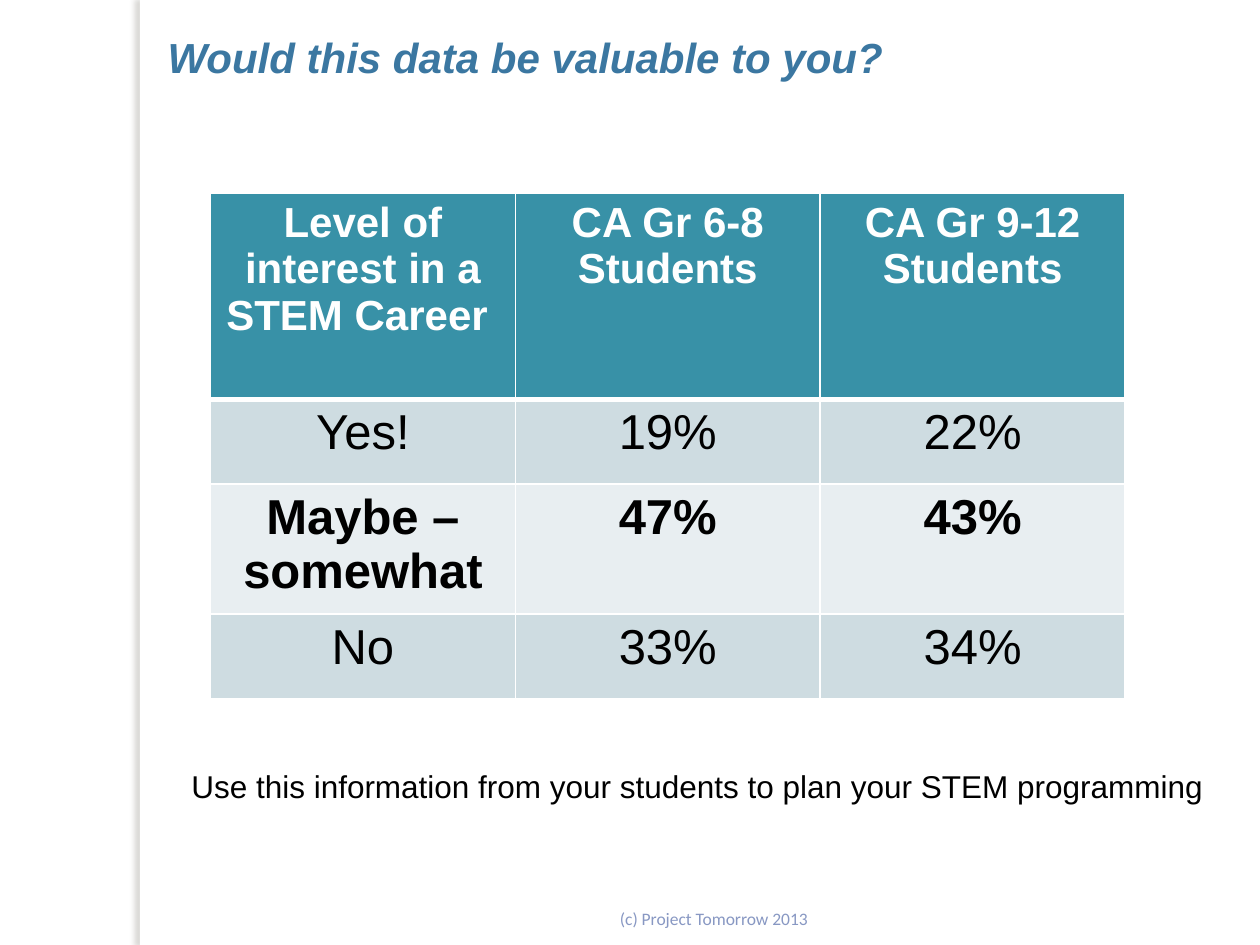
"""Build the STEM career interest slide."""
import pptx
import pptx.util
import pptx.dml.color
import pptx.enum.shapes
import pptx.enum.text
import pptx.oxml
import pptx.oxml.ns

Inches, Pt = pptx.util.Inches, pptx.util.Pt
ALIGN = pptx.enum.text.PP_ALIGN
ANCHOR = pptx.enum.text.MSO_ANCHOR
NS = pptx.oxml.ns.nsdecls("a")

COLORS = {
    "white": "FFFFFF", "title": "3B77A1", "header": "3891A7", "band": "CEDCE1",
    "light": "E8EEF1", "text": "000000", "footer": "8898C3", "shadow": "736F63",
}
TITLE = "Would this data be valuable to you?"
ADVICE = "Use this information from your students to plan your STEM programming"
COPYRIGHT = "(c) Project Tomorrow 2013"
HEADER = [["Level of interest in a STEM Career "], ["CA Gr 6-8 Students"], ["CA Gr 9-12", "Students"]]
ANSWERS = [
    ("Yes!", "19%", "22%"),
    ("Maybe – somewhat", "47%", "43%"),
    ("No", "33%", "34%"),
]
EMPHASIZED = "Maybe – somewhat"
TABLE_LEFT, TABLE_TOP, COLUMN_WIDTH = 1.67, 1.53, 2.42
HEADER_HEIGHT, ANSWER_HEIGHT = 1.64, 0.67


def rgb(name):
    return pptx.dml.color.RGBColor.from_string(COLORS[name])


def write(frame, lines, size, color, align=ALIGN.LEFT, font="Arial", bold=False, italic=False):
    for index, line in enumerate(lines):
        paragraph = frame.paragraphs[0] if index == 0 else frame.add_paragraph()
        paragraph.alignment = align
        run = paragraph.add_run()
        run.text = line
        run.font.name, run.font.size = font, Pt(size)
        run.font.bold, run.font.italic = bold, italic
        run.font.color.rgb = rgb(color)


def add_panel(slide, width):
    panel = slide.shapes.add_shape(
        pptx.enum.shapes.MSO_SHAPE.RECTANGLE, Inches(1.11), 0, Inches(width), Inches(7.5))
    panel.shadow.inherit = False
    panel.fill.solid()
    panel.fill.fore_color.rgb = rgb("white")
    panel.line.fill.background()
    return panel


def add_background(slide):
    page = add_panel(slide, 8.89)
    page_color = page._element.spPr.find(".//" + pptx.oxml.ns.qn("a:srgbClr"))
    page_color.append(pptx.oxml.parse_xml(f'<a:alpha {NS} val="93000"/>'))
    edge = add_panel(slide, 0.08)
    effects = edge._element.spPr.find(pptx.oxml.ns.qn("a:effectLst"))
    effects.append(pptx.oxml.parse_xml(
        f'<a:outerShdw {NS} blurRad="{Pt(3)}" dist="{Pt(3)}" dir="10800000" algn="tl" rotWithShape="0">'
        f'<a:srgbClr val="{COLORS["shadow"]}"><a:alpha val="25000"/></a:srgbClr></a:outerShdw>'))


def add_title(slide):
    title = slide.shapes.title
    title.left, title.top, title.width, title.height = map(Inches, (1.23, 0.2, 6.13, 0.5))
    slide.shapes._spTree.append(title._element)
    frame = title.text_frame
    frame.word_wrap = False
    frame.auto_size = pptx.enum.text.MSO_AUTO_SIZE.SHAPE_TO_FIT_TEXT
    frame.vertical_anchor = ANCHOR.TOP
    write(frame, [TITLE], 24, "title", bold=True, italic=True)


def set_borders(cell, top, bottom):
    properties = cell._tc.get_or_add_tcPr()
    for index, (side, width) in enumerate((("L", 1), ("R", 1), ("T", top), ("B", bottom))):
        properties.insert(index, pptx.oxml.parse_xml(
            f'<a:ln{side} {NS} w="{Pt(width)}"><a:solidFill>'
            f'<a:srgbClr val="{COLORS["white"]}"/></a:solidFill></a:ln{side}>'))


def add_interest_table(slide):
    rows, columns = len(ANSWERS) + 1, len(HEADER)
    table = slide.shapes.add_table(
        rows, columns, Inches(TABLE_LEFT), Inches(TABLE_TOP), Inches(COLUMN_WIDTH * columns),
        Inches(HEADER_HEIGHT + ANSWER_HEIGHT * len(ANSWERS))).table
    for column in table.columns:
        column.width = Inches(COLUMN_WIDTH)
    contents = [HEADER] + [[[value] for value in answer] for answer in ANSWERS]
    for r, row in enumerate(contents):
        is_header = r == 0
        table.rows[r].height = Inches(HEADER_HEIGHT if is_header else ANSWER_HEIGHT)
        bold = is_header or row[0] == [EMPHASIZED]
        fill = "header" if is_header else ("band" if r % 2 else "light")
        for c, lines in enumerate(row):
            cell = table.cell(r, c)
            cell.fill.solid()
            cell.fill.fore_color.rgb = rgb(fill)
            set_borders(cell, 3 if r == 1 else 1, 3 if is_header else 1)
            write(cell.text_frame, lines, 24 if is_header else 28,
                  "white" if is_header else "text", ALIGN.CENTER, bold=bold)


def add_text(slide, box, wrap, anchor, text, size, color, **style):
    frame = slide.shapes.add_textbox(*map(Inches, box)).text_frame
    frame.word_wrap = wrap
    frame.vertical_anchor = anchor
    write(frame, [text], size, color, **style)


def main():
    deck = pptx.Presentation()
    deck.slide_width, deck.slide_height = Inches(10), Inches(7.5)
    slide = deck.slides.add_slide(deck.slide_layouts[5])
    add_background(slide)
    add_title(slide)
    add_text(slide, (1.57, 6.9, 8.19, 0.52), True, ANCHOR.BOTTOM, COPYRIGHT, 10, "footer",
             align=ALIGN.CENTER, font="Calibri")
    add_interest_table(slide)
    add_text(slide, (1.42, 6.04, 8.31, 0.4), False, ANCHOR.TOP, ADVICE, 18, "text")
    deck.save("out.pptx")


if __name__ == "__main__":
    main()
